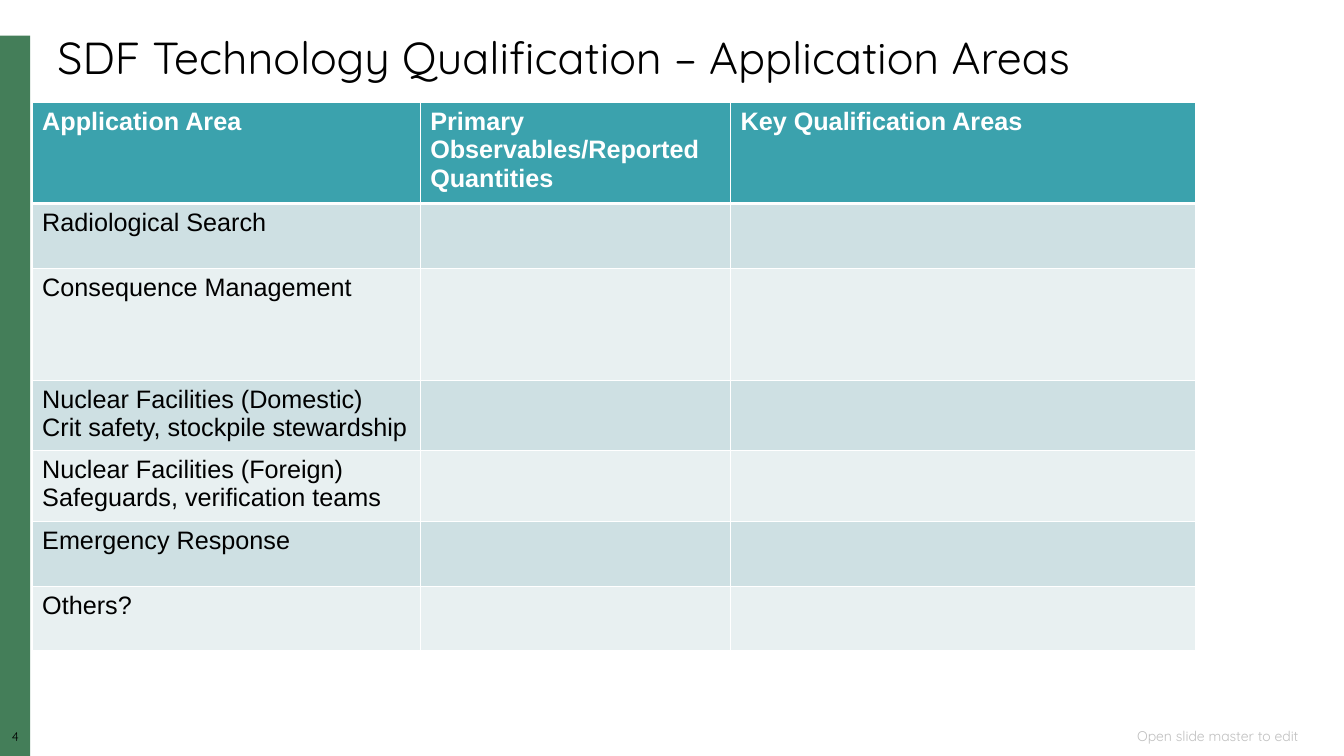
import pptx
import pptx.util
import pptx.dml.color
import pptx.enum.shapes
import pptx.enum.text
import lxml.etree

Cm = pptx.util.Cm
Pt = pptx.util.Pt
RGBColor = pptx.dml.color.RGBColor
ALIGN = pptx.enum.text.PP_ALIGN
ANCHOR = pptx.enum.text.MSO_ANCHOR

BLACK = RGBColor(0, 0, 0)
WHITE = RGBColor(255, 255, 255)
GRAY = RGBColor(0xBF, 0xBF, 0xBF)
GREEN = RGBColor(0x44, 0x7E, 0x59)
TEAL = RGBColor(0x3B, 0xA2, 0xAD)
BANDS = [RGBColor(0xE8, 0xF0, 0xF1), RGBColor(0xCE, 0xE0, 0xE3)]


def write(frame, text, size, font="Quicksand", color=BLACK, bold=False,
          align=ALIGN.LEFT, space=1.0):
    frame.word_wrap = True
    frame.text = text
    for para in frame.paragraphs:
        para.alignment = align
        para.line_spacing = space
        para.font.size = Pt(size)
        para.font.name = font
        para.font.bold = bold
        para.font.color.rgb = color


def edge(cell, side, width):
    props = cell._tc.get_or_add_tcPr()
    line = lxml.etree.SubElement(props, pptx.oxml.ns.qn("a:ln" + side), w=str(Pt(width)))
    fill = lxml.etree.SubElement(line, pptx.oxml.ns.qn("a:solidFill"))
    lxml.etree.SubElement(fill, pptx.oxml.ns.qn("a:srgbClr"), val=str(WHITE))


deck = pptx.Presentation()
deck.slide_width = Cm(33.87)
deck.slide_height = Cm(19.05)
slide = deck.slides.add_slide(deck.slide_layouts[6])
shapes = slide.shapes

bar = shapes.add_shape(pptx.enum.shapes.MSO_SHAPE.RECTANGLE,
                       Cm(0), Cm(0.9), Cm(0.76), Cm(18.15))
bar.shadow.inherit = False
bar.fill.solid()
bar.fill.fore_color.rgb = GREEN
bar.line.fill.background()

number = shapes.add_textbox(Cm(0), Cm(18.4), Cm(0.78), Cm(0.43)).text_frame
number.margin_left = number.margin_right = 0
number.margin_top = number.margin_bottom = 0
write(number, "4", 9, align=ALIGN.CENTER, space=0.9)

footer = shapes.add_textbox(Cm(22.25), Cm(18.3), Cm(10.72), Cm(0.5)).text_frame
footer.vertical_anchor = ANCHOR.MIDDLE
write(footer, "Open slide master to edit", 10, color=GRAY, align=ALIGN.RIGHT)

title = shapes.add_textbox(Cm(1.2), Cm(0.76), Cm(31.75), Cm(1.5)).text_frame
title.vertical_anchor = ANCHOR.MIDDLE
write(title, "SDF Technology Qualification – Application Areas", 32, space=0.9)

heads = ["Application Area", "Primary Observables/Reported Quantities",
         "Key Qualification Areas"]
areas = [
    "Radiological Search",
    "Consequence Management",
    "Nuclear Facilities (Domestic)\nCrit safety, stockpile stewardship",
    "Nuclear Facilities (Foreign)\nSafeguards, verification teams",
    "Emergency Response",
    "Others?",
]
rows = [heads] + [[area, "", ""] for area in areas]
widths = [9.78, 7.82, 11.73]
heights = [2.36, 1.63, 2.82, 1.63, 1.63, 1.63, 1.63]

table = shapes.add_table(len(rows), len(widths), Cm(0.81), Cm(2.59),
                         Cm(sum(widths)), Cm(sum(heights))).table
for col, width in zip(table.columns, widths):
    col.width = Cm(width)
for r, row in enumerate(rows):
    table.rows[r].height = Cm(heights[r])
    for c, text in enumerate(row):
        cell = table.cell(r, c)
        for side in "LRTB":
            edge(cell, side, 3 if (r, side) in [(0, "B"), (1, "T")] else 1)
        cell.fill.solid()
        cell.fill.fore_color.rgb = BANDS[r % 2] if r else TEAL
        write(cell.text_frame, text, 18, font="Arial",
              color=BLACK if r else WHITE, bold=r == 0)

deck.save("out.pptx")
